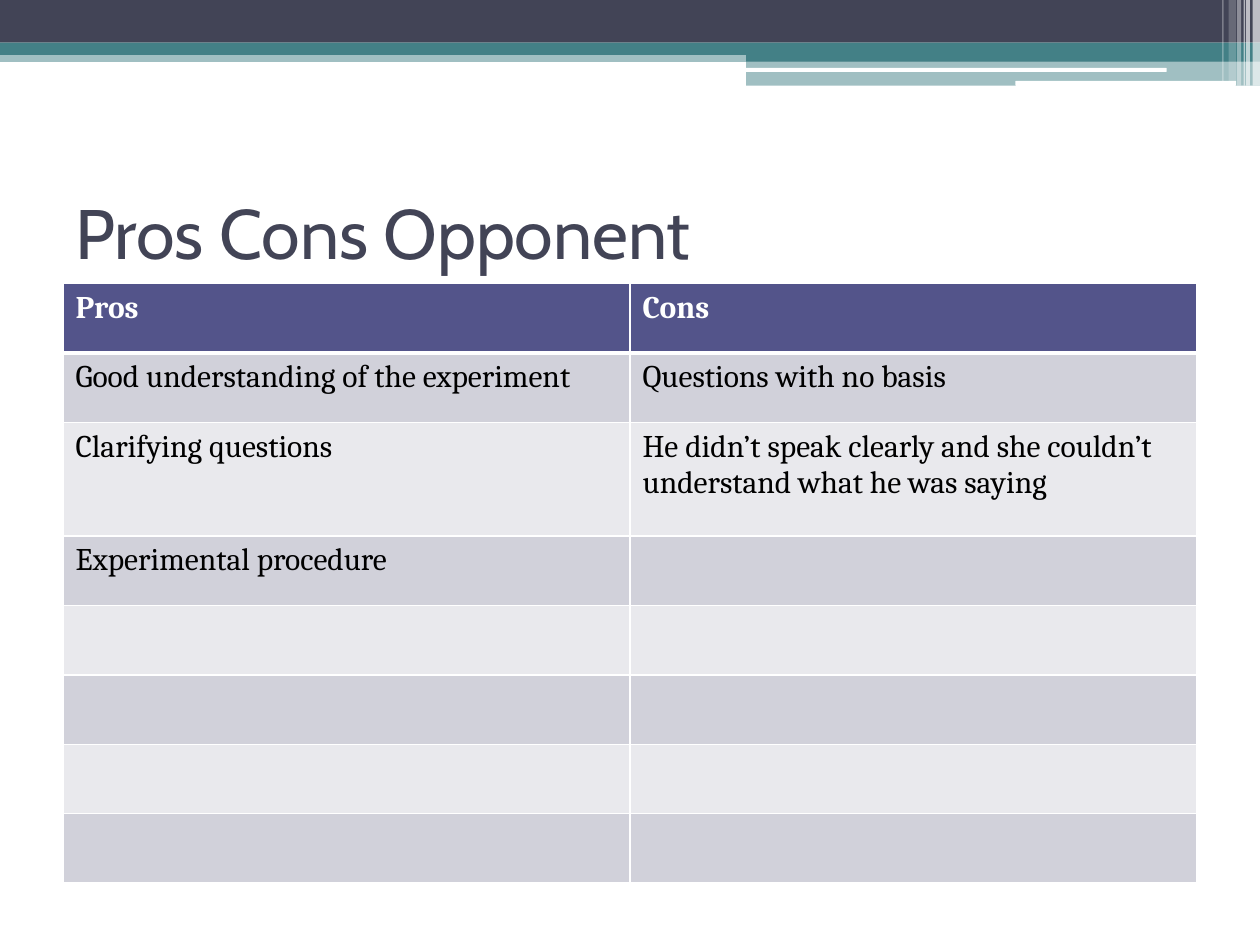
from lxml import etree
from pptx import Presentation
from pptx.dml.color import RGBColor
from pptx.enum.shapes import MSO_SHAPE
from pptx.enum.text import MSO_ANCHOR
from pptx.oxml.ns import qn
from pptx.util import Cm, Pt

RECT, ROUND = MSO_SHAPE.RECTANGLE, MSO_SHAPE.ROUNDED_RECTANGLE
MIDDLE = MSO_ANCHOR.MIDDLE

DARK, TEAL, WHITE, BLACK = "424456", "438086", "FFFFFF", "000000"
HEAD, BANDS = "53548A", ("D1D1DA", "E9E9ED")
WIDE, HIGH = 25.4, 19.05

# kind, left, top, width, height, colour, opacity in percent
BARS = [
    (RECT, 0, 1.02, WIDE, 0.23, TEAL, 50),
    (RECT, 0, 0, WIDE, 0.86, DARK, 100),
    (RECT, 0, 0.86, WIDE, 0.25, TEAL, 100),
    (RECT, 15.04, 0.99, 10.36, 0.25, TEAL, 100),
    (RECT, 15.04, 1.22, 10.36, 0.51, TEAL, 50),
    (ROUND, 15.01, 1.37, 8.51, 0.08, WHITE, 100),
    (ROUND, 20.47, 1.63, 4.45, 0.1, WHITE, 100),
]
# left, width, height, opacity of the white stripes in the corner
STRIPES = [
    (25.25, 0.15, 1.73, 65),
    (25.12, 0.08, 1.73, 65),
    (25.07, 0.03, 1.73, 60),
    (24.94, 0.08, 1.73, 40),
    (24.77, 0.15, 1.63, 20),
    (24.64, 0.03, 1.63, 30),
]
TITLE = "Pros Cons Opponent"
ROWS = [
    ("Pros", "Cons"),
    ("Good understanding of the experiment", "Questions with no basis"),
    ("Clarifying questions",
     "He didn’t speak clearly and she couldn’t understand what he was saying"),
    ("Experimental procedure", ""),
] + [("", "")] * 4
ROW_HIGH, TALL_ROW, TALL_HIGH = 1.4, 2, 2.29
COL_WIDE = 11.43

TITLE_FONT = {"name": "Cabin", "size": Pt(40), "bold": False}
CELL_FONT = {"name": "Cambria", "size": Pt(18)}


def rgb(code):
    return RGBColor.from_string(code)


def paint(fill, code, alpha=100):
    fill.solid()
    fill.fore_color.rgb = rgb(code)
    if alpha < 100:
        tint = fill._xPr.find(qn("a:solidFill"))[0]
        etree.SubElement(tint, qn("a:alpha"), val=str(alpha * 1000))


def style(font, code, form):
    for key, value in form.items():
        setattr(font, key, value)
    font.color.rgb = rgb(code)


def add_bar(slide, kind, left, top, width, height, code, alpha):
    bar = slide.shapes.add_shape(kind, Cm(left), Cm(top), Cm(width), Cm(height))
    bar.shadow.inherit = False
    bar.line.fill.background()
    paint(bar.fill, code, alpha)


def add_edges(cell, widths):
    """Draw white borders, given in points for left, right, top and bottom."""
    props = cell._tc.get_or_add_tcPr()
    for side, width in zip("LRTB", widths):
        line = etree.SubElement(props, qn("a:ln" + side), w=str(Pt(width)))
        solid = etree.SubElement(line, qn("a:solidFill"))
        etree.SubElement(solid, qn("a:srgbClr"), val=WHITE)


def add_title(slide):
    box = slide.shapes.add_textbox(Cm(1.27), Cm(3.18), Cm(22.86), Cm(2.97))
    frame = box.text_frame
    frame.word_wrap = True
    frame.vertical_anchor = MIDDLE
    run = frame.paragraphs[0].add_run()
    run.text = TITLE
    style(run.font, DARK, TITLE_FONT)


def add_grid(slide):
    highs = [TALL_HIGH if r == TALL_ROW else ROW_HIGH for r in range(len(ROWS))]
    cols = len(ROWS[0])
    table = slide.shapes.add_table(
        len(ROWS), cols, Cm(1.27), Cm(5.72),
        Cm(COL_WIDE * cols), Cm(sum(highs))).table
    for col in table.columns:
        col.width = Cm(COL_WIDE)
    for r, texts in enumerate(ROWS):
        table.rows[r].height = Cm(highs[r])
        head = r == 0
        for c, text in enumerate(texts):
            cell = table.cell(r, c)
            add_edges(cell, (1, 1, 3 if r == 1 else 1, 3 if head else 1))
            paint(cell.fill, HEAD if head else BANDS[(r - 1) % 2])
            cell.text = text
            style(cell.text_frame.paragraphs[0].font, WHITE if head else BLACK,
                  {**CELL_FONT, "bold": head})


def main():
    deck = Presentation()
    deck.slide_width, deck.slide_height = Cm(WIDE), Cm(HIGH)
    slide = deck.slides.add_slide(deck.slide_layouts[6])
    paint(slide.background.fill, WHITE)
    for bar in BARS:
        add_bar(slide, *bar)
    for left, width, height, alpha in STRIPES:
        add_bar(slide, RECT, left, 0, width, height, WHITE, alpha)
    add_title(slide)
    add_grid(slide)
    deck.save("out.pptx")


if __name__ == "__main__":
    main()
